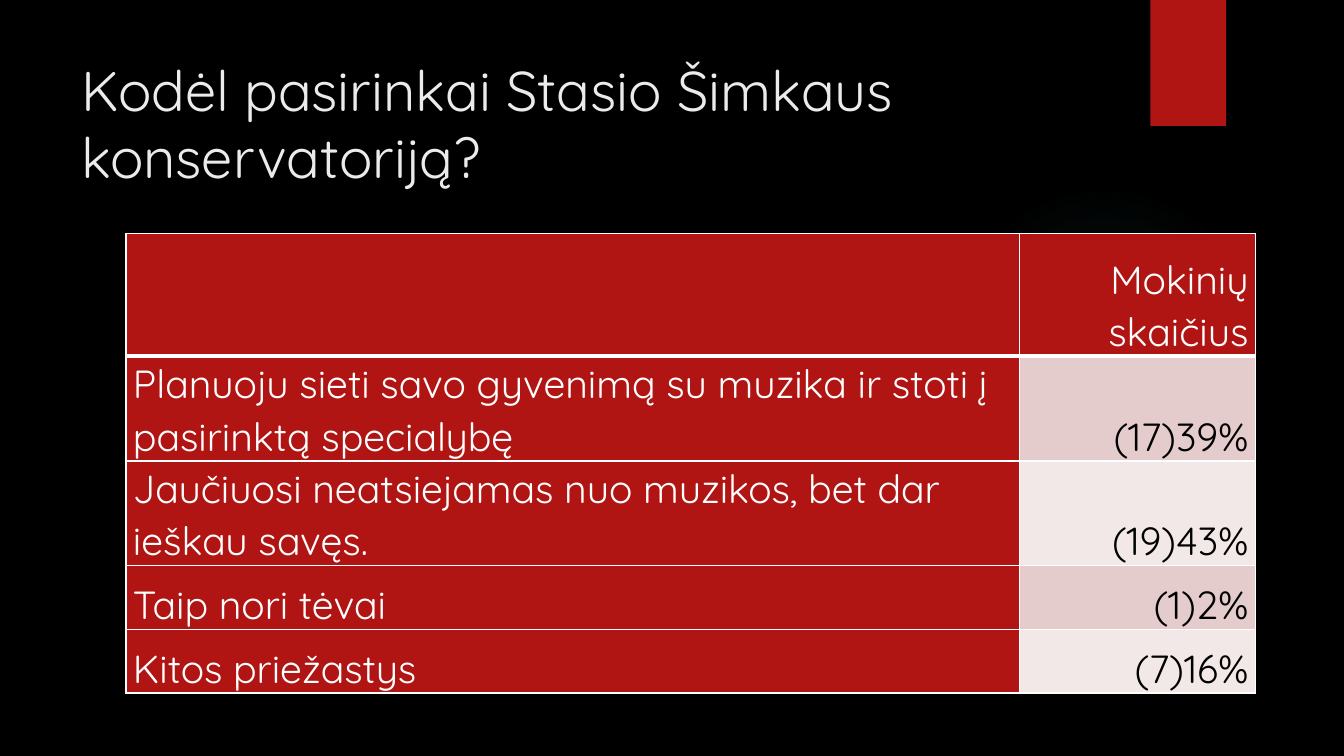
from lxml import etree
from pptx import Presentation
from pptx.dml.color import RGBColor
from pptx.enum.shapes import MSO_SHAPE
from pptx.enum.text import MSO_ANCHOR, PP_ALIGN
from pptx.oxml import parse_xml
from pptx.util import Pt

RECTANGLE, OVAL = MSO_SHAPE.RECTANGLE, MSO_SHAPE.OVAL
TOP, BOTTOM = MSO_ANCHOR.TOP, MSO_ANCHOR.BOTTOM
LEFT, RIGHT = PP_ALIGN.LEFT, PP_ALIGN.RIGHT
DRAWING = "http://schemas.openxmlformats.org/drawingml/2006/main"

COLOURS = {
    "black": "000000", "white": "FFFFFF", "title": "EBEBEB", "red": "B01513",
    "dark band": "E4CCCC", "light band": "F2E8E7", "glow": "50B9C1",
}
FONT = "Quicksand"
ROWS = [
    ("", "Mokinių skaičius"),
    ("Planuoju sieti savo gyvenimą su muzika ir stoti į pasirinktą specialybę", "(17)39%"),
    ("Jaučiuosi neatsiejamas nuo muzikos, bet dar ieškau savęs.", "(19)43%"),
    ("Taip nori tėvai", "(1)2%"),
    ("Kitos priežastys", "(7)16%"),
]


def style_font(font, size, colour):
    font.name, font.size = FONT, Pt(size)
    font.color.rgb = RGBColor.from_string(COLOURS[colour])


def add_borders(cell, widths):
    """Give the cell white left, right, top and bottom lines, widths in points."""
    properties = cell._tc.get_or_add_tcPr()
    for index, (side, width) in enumerate(zip("LRTB", widths)):
        line = etree.Element(f"{{{DRAWING}}}ln{side}", w=str(Pt(width)))
        fill = etree.SubElement(line, f"{{{DRAWING}}}solidFill")
        etree.SubElement(fill, f"{{{DRAWING}}}srgbClr", val=COLOURS["white"])
        properties.insert(index, line)


deck = Presentation()
deck.slide_width, deck.slide_height = Pt(960), Pt(540)
page = deck.slides.add_slide(deck.slide_layouts[5])
page.background.fill.solid()
page.background.fill.fore_color.rgb = RGBColor.from_string(COLOURS["black"])

# Background glow and red tab
glow = page.shapes.add_shape(OVAL, Pt(677.5), Pt(131.75), Pt(221.75), Pt(221.75))
tab = page.shapes.add_shape(RECTANGLE, Pt(821.75), Pt(0), Pt(54), Pt(90))
for shape in (glow, tab):
    shape.shadow.inherit = False
    shape.line.fill.background()
tab.fill.solid()
tab.fill.fore_color.rgb = RGBColor.from_string(COLOURS["red"])
stops = "".join(
    f'<a:gs pos="{place * 1000}"><a:srgbClr val="{COLOURS["glow"]}">'
    f'<a:alpha val="{opacity * 1000}"/></a:srgbClr></a:gs>'
    for place, opacity in ((0, 7), (36, 6), (69, 0))
)
glow._element.spPr.find(f"{{{DRAWING}}}prstGeom").addnext(parse_xml(
    f'<a:gradFill xmlns:a="{DRAWING}"><a:gsLst>{stops}</a:gsLst><a:path path="circle">'
    '<a:fillToRect l="50000" t="50000" r="50000" b="50000"/></a:path></a:gradFill>'
))

# Title
title = page.shapes.title
title.left, title.top, title.width, title.height = Pt(51), Pt(36), Pt(741), Pt(110)
title.text_frame.text = "Kodėl pasirinkai Stasio Šimkaus konservatoriją?"
title.text_frame.vertical_anchor = TOP
title.text_frame.word_wrap = True
para = title.text_frame.paragraphs[0]
para.alignment = LEFT
style_font(para.font, 40, "title")

# Answer table
frame = page.shapes.add_table(len(ROWS), 2, Pt(90), Pt(166.5), Pt(807), Pt(317.5))
table = frame.table
for column, width in zip(table.columns, (638, 168.75)):
    column.width = Pt(width)
cell_format = {
    "vertical_anchor": BOTTOM, "margin_left": Pt(5), "margin_right": Pt(5),
    "margin_top": 0, "margin_bottom": 0,
}
for row, texts in enumerate(ROWS):
    table.rows[row].height = Pt(45.5 if row else 88)
    for column, text in enumerate(texts):
        cell = table.cell(row, column)
        for name, value in cell_format.items():
            setattr(cell, name, value)
        is_value = row > 0 and column == 1
        band = "dark band" if row % 2 else "light band"
        cell.fill.solid()
        cell.fill.fore_color.rgb = RGBColor.from_string(COLOURS[band if is_value else "red"])
        add_borders(cell, (1, 1, 3 if row == 1 else 1, 1 if row else 3))
        cell.text = text
        para = cell.text_frame.paragraphs[0]
        para.alignment = RIGHT if column else LEFT
        para.line_spacing, para.space_after = 1.07, Pt(8)
        style_font(para.font, 28, "black" if is_value else "white")
        para.font.bold = False

deck.save("out.pptx")
